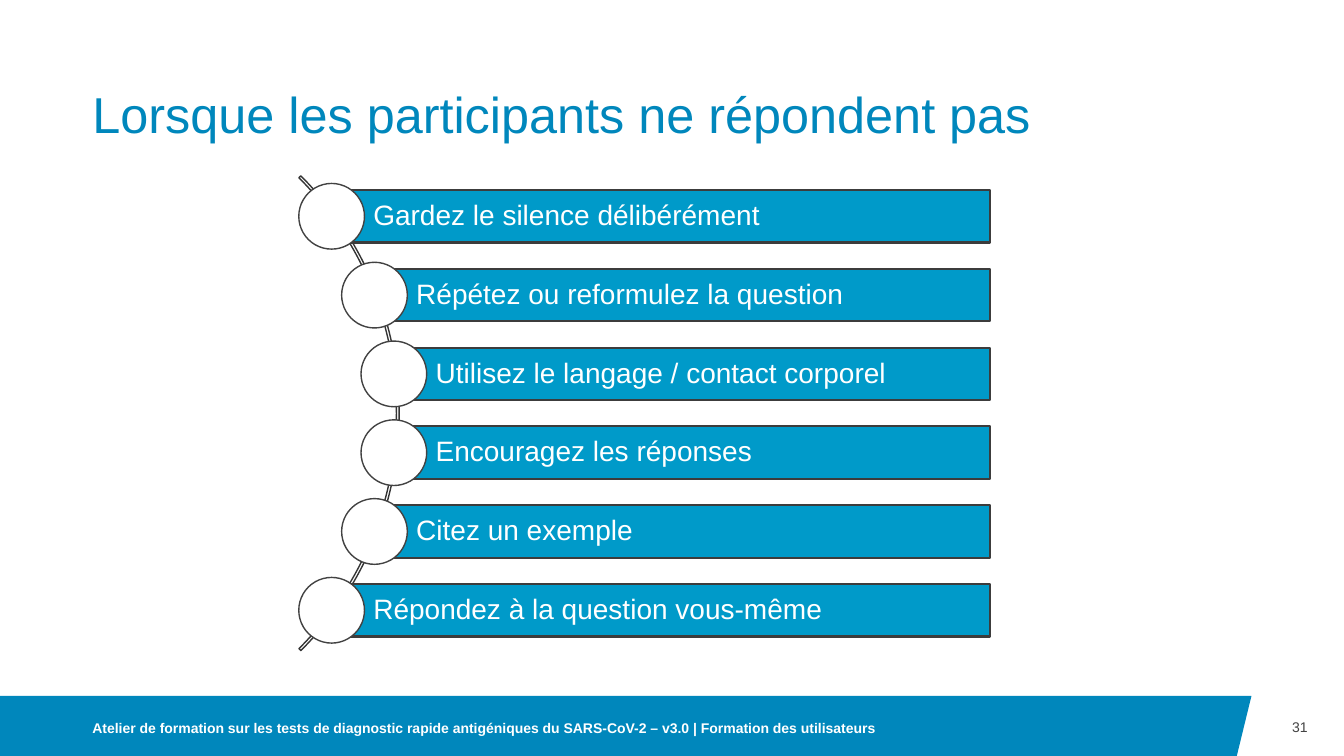
"""Build the slide on what to do when participants do not answer."""
from math import sqrt

from pptx import Presentation
from pptx.dml import color
from pptx.enum import shapes, text
from pptx.util import Pt

STEPS = [
    "Gardez le silence délibérément",
    "Répétez ou reformulez la question",
    "Utilisez le langage / contact corporel",
    "Encouragez les réponses",
    "Citez un exemple",
    "Répondez à la question vous-même",
]
ARC_X, ARC_Y, ARC_R = 45.4, 295.2, 239.75
TRACK_R = 237.6
PITCH, BAR_H, BAR_RIGHT, DOT = 56.28, 37.5, 707.3, 46.9


def rgb(value):
    return color.RGBColor.from_string(value)


def put_text(s, content, size=20, fill="FFFFFF", bold=False, align="LEFT",
             anchor="MIDDLE", insets=(0, 0, 0, 0), spacing=1.0):
    tf = s.text_frame
    tf.word_wrap = True
    tf.vertical_anchor = getattr(text.MSO_ANCHOR, anchor)
    tf.margin_left, tf.margin_top, tf.margin_right, tf.margin_bottom = map(Pt, insets)
    p = tf.paragraphs[0]
    p.alignment = getattr(text.PP_ALIGN, align)
    p.line_spacing = spacing
    r = p.add_run()
    r.text = content
    r.font.name = "Arial"
    r.font.size = Pt(size)
    r.font.bold = bold
    r.font.color.rgb = rgb(fill)


class Deck:
    BLUE, BAR, EDGE, GREY, ARC = "0087BC", "009AC9", "3C3C3C", "424242", "353535"

    def __init__(self, prs):
        self.sp = prs.slides.add_slide(prs.slide_layouts[6]).shapes

    def paint(self, s, fill=None, line=None, width=1):
        s.shadow.inherit = False
        if fill:
            s.fill.solid()
            s.fill.fore_color.rgb = rgb(fill)
        else:
            s.fill.background()
        if line:
            s.line.color.rgb = rgb(line)
            s.line.width = Pt(width)
        else:
            s.line.fill.background()
        return s

    def shape(self, kind, x, y, w, h, **style):
        kind = getattr(shapes.MSO_SHAPE, kind)
        return self.paint(self.sp.add_shape(kind, Pt(x), Pt(y), Pt(w), Pt(h)), **style)

    def outline(self, points, **style):
        start, *rest = [(Pt(x), Pt(y)) for x, y in points]
        builder = self.sp.build_freeform(*start)
        builder.add_line_segments(rest)
        return self.paint(builder.convert_to_shape(), **style)

    def label(self, content, x, y, w, h, **style):
        put_text(self.sp.add_textbox(Pt(x), Pt(y), Pt(w), Pt(h)), content, **style)

    def arc(self, x, y, radius):
        s = self.shape("BLOCK_ARC", x - radius, y - radius, 2 * radius, 2 * radius,
                       line=self.ARC)
        for i, value in enumerate((189, 27, 0.004)):
            s.adjustments[i] = value

    def step(self, content, x, y):
        bar = self.shape("RECTANGLE", x, y - BAR_H / 2, BAR_RIGHT - x, BAR_H,
                         fill=self.BAR, line=self.EDGE, width=1.5)
        put_text(bar, content, insets=(29.8, 4, 4, 4), spacing=0.9)
        self.shape("OVAL", x - DOT / 2, y - DOT / 2, DOT, DOT,
                   fill="FFFFFF", line=self.GREY)


def main():
    prs = Presentation()
    prs.slide_width, prs.slide_height = Pt(960), Pt(540)
    deck = Deck(prs)
    deck.outline([(0, 497), (894, 497), (883, 542), (0, 542)], fill=deck.BLUE)
    deck.label("Lorsque les participants ne répondent pas", 66, 29, 828, 74,
               size=36, fill=deck.BLUE, anchor="BOTTOM", spacing=0.9)
    deck.label("31", 894, 497, 40, 45, size=10, fill=deck.GREY, align="RIGHT")
    deck.arc(ARC_X, ARC_Y, ARC_R)
    for i, content in enumerate(STEPS):
        dy = (i - (len(STEPS) - 1) / 2) * PITCH
        deck.step(content, ARC_X + sqrt(TRACK_R ** 2 - dy ** 2), ARC_Y + dy)
    deck.label("Atelier de formation sur les tests de diagnostic rapide antigéniques "
               "du SARS-CoV-2 – v3.0 | Formation des utilisateurs",
               66, 500.5, 576, 39.5, size=10, bold=True)
    prs.save("out.pptx")


if __name__ == "__main__":
    main()
